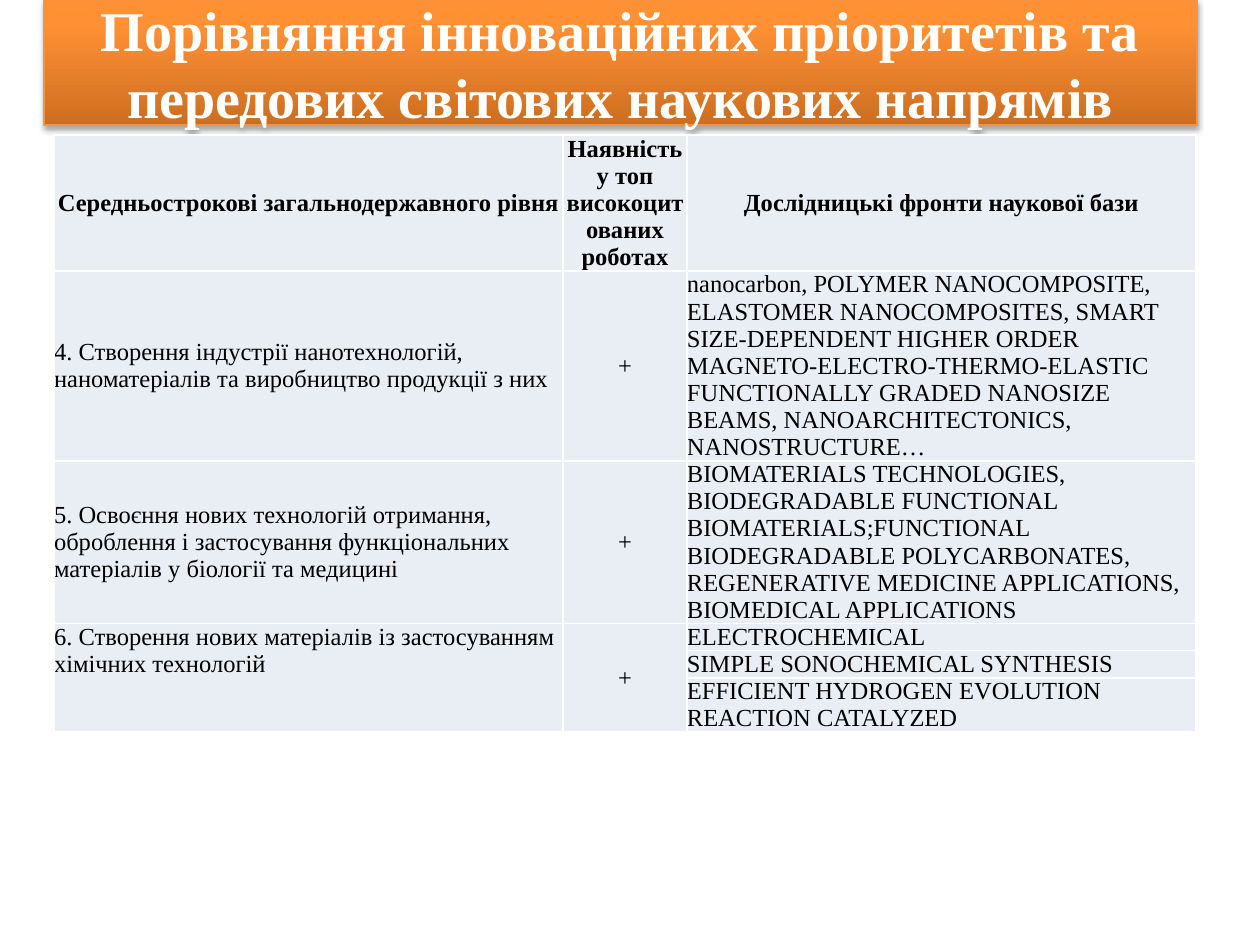
import pptx
import pptx.dml.color
import pptx.enum.text
import pptx.oxml
import pptx.oxml.ns
import pptx.util

PX = 914400 // 126
FONT = "Times New Roman"
ALIGN = pptx.enum.text.PP_ALIGN
ANCHOR = pptx.enum.text.MSO_ANCHOR
NS = pptx.oxml.ns.nsdecls("a")

TITLE = "Порівняння інноваційних пріоритетів та передових світових наукових напрямів"
TITLE_BOX = (44, 0, 1153, 125)
TITLE_STOPS = [(0, "CC6E20"), (80, "FF9034"), (100, "FF9136")]

TABLE_LEFT, TABLE_TOP = 54, 135
COL_WIDTHS = [509, 124, 509]
ROW_HEIGHTS = [136, 190, 162, 27, 27, 54]
MERGED_FROM = 3  # the first two columns span all rows from here down
ROWS = [
    ("Середньострокові загальнодержавного рівня",
     "Наявність у топ високоцитованих роботах",
     "Дослідницькі фронти наукової бази"),
    ("4. Створення індустрії нанотехнологій, наноматеріалів та виробництво продукції з них",
     "+",
     "nanocarbon, POLYMER NANOCOMPOSITE, ELASTOMER NANOCOMPOSITES, SMART "
     "SIZE-DEPENDENT HIGHER ORDER MAGNETO-ELECTRO-THERMO-ELASTIC FUNCTIONALLY "
     "GRADED NANOSIZE BEAMS, NANOARCHITECTONICS, NANOSTRUCTURE…"),
    ("5. Освоєння нових технологій отримання, оброблення і застосування "
     "функціональних матеріалів у біології та медицині",
     "+",
     "BIOMATERIALS TECHNOLOGIES, BIODEGRADABLE FUNCTIONAL BIOMATERIALS;FUNCTIONAL "
     "BIODEGRADABLE POLYCARBONATES, REGENERATIVE MEDICINE APPLICATIONS, "
     "BIOMEDICAL APPLICATIONS"),
    ("6. Створення нових матеріалів із застосуванням хімічних технологій",
     "+",
     "ELECTROCHEMICAL"),
    (None, None, "SIMPLE SONOCHEMICAL SYNTHESIS"),
    (None, None, "EFFICIENT HYDROGEN EVOLUTION REACTION CATALYZED"),
]


def rgb(value):
    return pptx.dml.color.RGBColor.from_string(value)


def write(tf, text, size, color, bold, align):
    p = tf.paragraphs[0]
    p.alignment = align
    r = p.add_run()
    r.text = text
    r.font.name = FONT
    r.font.size = pptx.util.Pt(size)
    r.font.bold = bold
    r.font.color.rgb = rgb(color)


def add_title(s):
    sp = s.shapes.title
    sp.left, sp.top, sp.width, sp.height = (v * PX for v in TITLE_BOX)
    sp.line.color.rgb = rgb("F69240")
    sp.line.width = pptx.util.Pt(0.75)
    stops = "".join(f'<a:gs pos="{pos * 1000}"><a:srgbClr val="{color}"/></a:gs>'
                    for pos, color in TITLE_STOPS)
    sp.line._ln.addprevious(pptx.oxml.parse_xml(
        f'<a:gradFill {NS} rotWithShape="1"><a:gsLst>{stops}</a:gsLst>'
        '<a:lin ang="16200000" scaled="0"/></a:gradFill>'))
    sp.line._ln.addnext(pptx.oxml.parse_xml(
        f'<a:effectLst {NS}><a:outerShdw blurRad="40000" dist="23000" dir="5400000" '
        'rotWithShape="0"><a:srgbClr val="000000"><a:alpha val="35000"/></a:srgbClr>'
        '</a:outerShdw></a:effectLst>'))
    tf = sp.text_frame
    tf.word_wrap = True
    tf.auto_size = pptx.enum.text.MSO_AUTO_SIZE.NONE
    tf.vertical_anchor = ANCHOR.MIDDLE
    write(tf, TITLE, 32, "FFFFFF", True, ALIGN.CENTER)


def style_cell(cell):
    cell.margin_left = cell.margin_right = cell.margin_top = cell.margin_bottom = 0
    cell.fill.solid()
    cell.fill.fore_color.rgb = rgb("E9EDF4")
    for i, side in enumerate(("lnL", "lnR", "lnT", "lnB")):
        cell._tc.get_or_add_tcPr().insert(i, pptx.oxml.parse_xml(
            f'<a:{side} {NS} w="12700"><a:solidFill><a:srgbClr val="FFFFFF"/>'
            f'</a:solidFill></a:{side}>'))


def anchor_for(row, col):
    if row < MERGED_FROM or col == 1:
        return ANCHOR.MIDDLE
    return ANCHOR.TOP if col == 0 else ANCHOR.BOTTOM


def add_table(s):
    table = s.shapes.add_table(
        len(ROWS), len(COL_WIDTHS), TABLE_LEFT * PX, TABLE_TOP * PX,
        sum(COL_WIDTHS) * PX, sum(ROW_HEIGHTS) * PX).table
    for column, width in zip(table.columns, COL_WIDTHS):
        column.width = width * PX
    for row, height in zip(table.rows, ROW_HEIGHTS):
        row.height = height * PX
    for i, texts in enumerate(ROWS):
        for j, text in enumerate(texts):
            cell = table.cell(i, j)
            style_cell(cell)
            if text:
                cell.vertical_anchor = anchor_for(i, j)
                align = ALIGN.CENTER if i == 0 or j == 1 else ALIGN.LEFT
                write(cell.text_frame, text, 14, "000000", i == 0, align)
    for j in (0, 1):
        table.cell(MERGED_FROM, j).merge(table.cell(len(ROWS) - 1, j))


def main():
    prs = pptx.Presentation()
    prs.slide_width, prs.slide_height = 1260 * PX, 945 * PX
    s = prs.slides.add_slide(prs.slide_layouts[5])
    add_title(s)
    add_table(s)
    prs.save("out.pptx")


if __name__ == "__main__":
    main()
